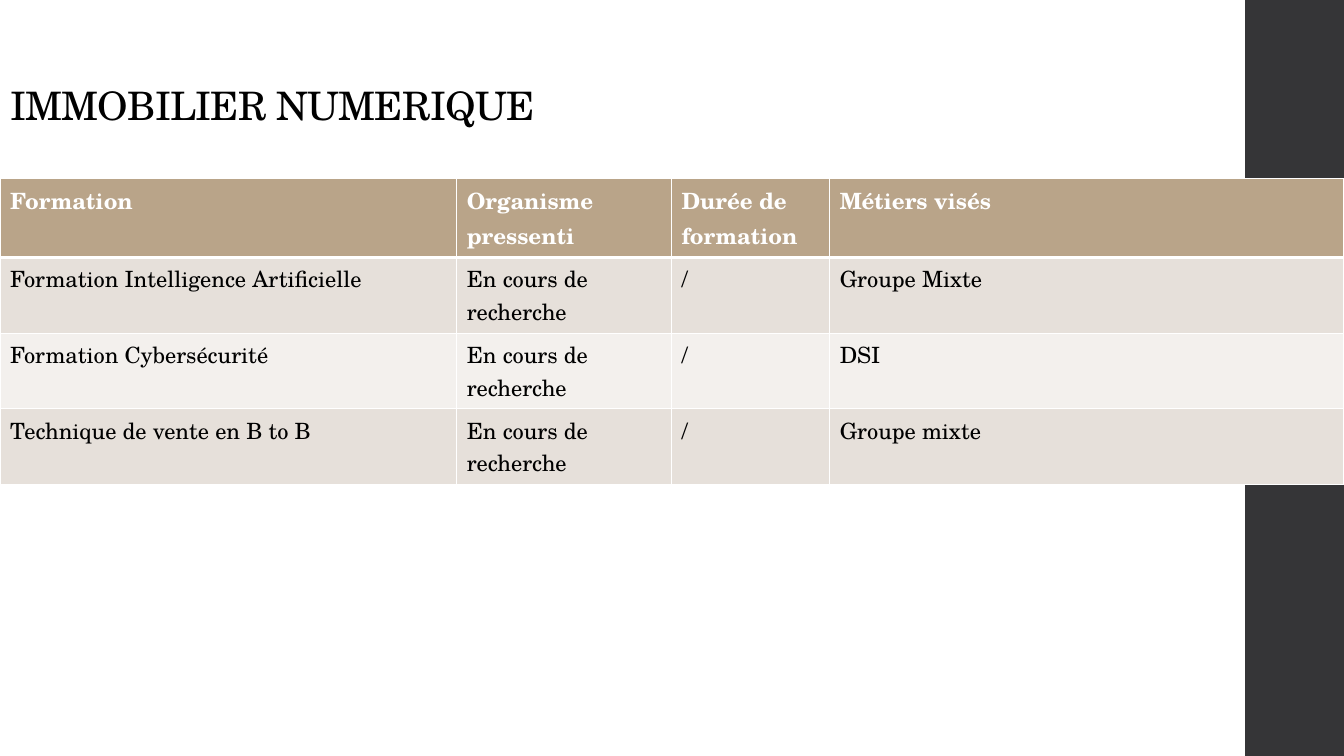
from dataclasses import dataclass

from lxml import etree
from pptx import Presentation
from pptx.dml.color import RGBColor
from pptx.enum.shapes import MSO_SHAPE
from pptx.enum.text import MSO_ANCHOR, MSO_AUTO_SIZE, PP_ALIGN
from pptx.oxml.ns import qn
from pptx.slide import Slide
from pptx.table import _Cell
from pptx.text.text import _Paragraph
from pptx.util import Inches, Pt

RECTANGLE = MSO_SHAPE.RECTANGLE
BOTTOM = MSO_ANCHOR.BOTTOM
NO_AUTOFIT = MSO_AUTO_SIZE.NONE
LEFT = PP_ALIGN.LEFT

FONT = "TeX Gyre Schola"
BLACK = "000000"
WHITE = "FFFFFF"
CHARCOAL = "353537"
COLUMN_WIDTHS = (4.53, 2.13, 1.57, 5.1)
TITLE_ONLY_LAYOUT = 5


@dataclass(frozen=True)
class RowStyle:
    height: float
    fill: str
    text: str
    bold: bool
    top: float
    bottom: float


@dataclass(frozen=True)
class TableRow:
    texts: tuple[str, ...]
    style: RowStyle


HEADER = RowStyle(0.77, "B9A489", WHITE, True, 1, 3)
FIRST = RowStyle(0.75, "E6E0DA", BLACK, False, 3, 1)
LIGHT = RowStyle(0.75, "F3F0ED", BLACK, False, 1, 1)
DARK = RowStyle(0.75, "E6E0DA", BLACK, False, 1, 1)
PENDING = "En cours de recherche"

ROWS = (
    TableRow(("Formation", "Organisme pressenti", "Durée de formation", "Métiers visés"), HEADER),
    TableRow(("Formation Intelligence Artificielle", PENDING, "/", "Groupe Mixte"), FIRST),
    TableRow(("Formation Cybersécurité", PENDING, "/", "DSI"), LIGHT),
    TableRow(("Technique de vente en B to B", PENDING, "/", "Groupe mixte"), DARK),
)


def color(value: str) -> RGBColor:
    """Turn a hex string into a colour."""
    return RGBColor.from_string(value)


def add_span(para: _Paragraph, text: str, size: float, ink: str, bold: bool = False,
             spacing: float = 0) -> None:
    """Add one formatted run to a paragraph."""
    span = para.add_run()
    span.text = text
    span.font.name = FONT
    span.font.size = Pt(size)
    span.font.bold = bold
    span.font.color.rgb = color(ink)
    if spacing:
        span.font._element.set("spc", str(round(spacing * 100)))


def add_sidebar(page: Slide) -> None:
    """Draw the dark band on the right."""
    band = page.shapes.add_shape(RECTANGLE, Inches(12.35), 0, Inches(1), Inches(7.5))
    band.shadow.inherit = False
    band.fill.solid()
    band.fill.fore_color.rgb = color(CHARCOAL)
    band.line.fill.background()


def add_title(page: Slide, text: str) -> None:
    """Place and fill the title placeholder."""
    title = page.shapes.title
    title.left, title.top = Inches(0), Inches(0.18)
    title.width, title.height = Inches(10.5), Inches(1.15)
    box = title.text_frame
    box.word_wrap = True
    box.auto_size = NO_AUTOFIT
    box.vertical_anchor = BOTTOM
    para = box.paragraphs[0]
    para.alignment = LEFT
    para.line_spacing = 0.9
    add_span(para, text, 28, BLACK, spacing=-0.5)


def set_borders(cell: _Cell, style: RowStyle) -> None:
    """Give a cell white borders on its four sides."""
    properties = cell._tc.get_or_add_tcPr()
    sides = {"lnL": 1, "lnR": 1, "lnT": style.top, "lnB": style.bottom}
    for side, width in sides.items():
        line = etree.SubElement(properties, qn(f"a:{side}"), w=str(Pt(width)))
        fill = etree.SubElement(line, qn("a:solidFill"))
        etree.SubElement(fill, qn("a:srgbClr"), val=WHITE)


def fill_cell(cell: _Cell, text: str, style: RowStyle) -> None:
    """Write and format one table cell."""
    set_borders(cell, style)
    cell.fill.solid()
    cell.fill.fore_color.rgb = color(style.fill)
    add_span(cell.text_frame.paragraphs[0], text, 16, style.text, style.bold)


def add_training_table(page: Slide) -> None:
    """Build the table of training courses."""
    height = sum(row.style.height for row in ROWS)
    table = page.shapes.add_table(
        len(ROWS), len(COLUMN_WIDTHS), Inches(0), Inches(1.77),
        Inches(sum(COLUMN_WIDTHS)), Inches(height)).table
    for column, width in zip(table.columns, COLUMN_WIDTHS):
        column.width = Inches(width)
    for line, row in zip(table.rows, ROWS):
        line.height = Inches(row.style.height)
        for cell, text in zip(line.cells, row.texts):
            fill_cell(cell, text, row.style)


def main() -> None:
    """Build and save the deck."""
    deck = Presentation()
    deck.slide_width, deck.slide_height = Inches(13.33), Inches(7.5)
    page = deck.slides.add_slide(deck.slide_layouts[TITLE_ONLY_LAYOUT])
    add_sidebar(page)
    add_title(page, "IMMOBILIER NUMERIQUE")
    add_training_table(page)
    deck.save("out.pptx")


if __name__ == "__main__":
    main()
